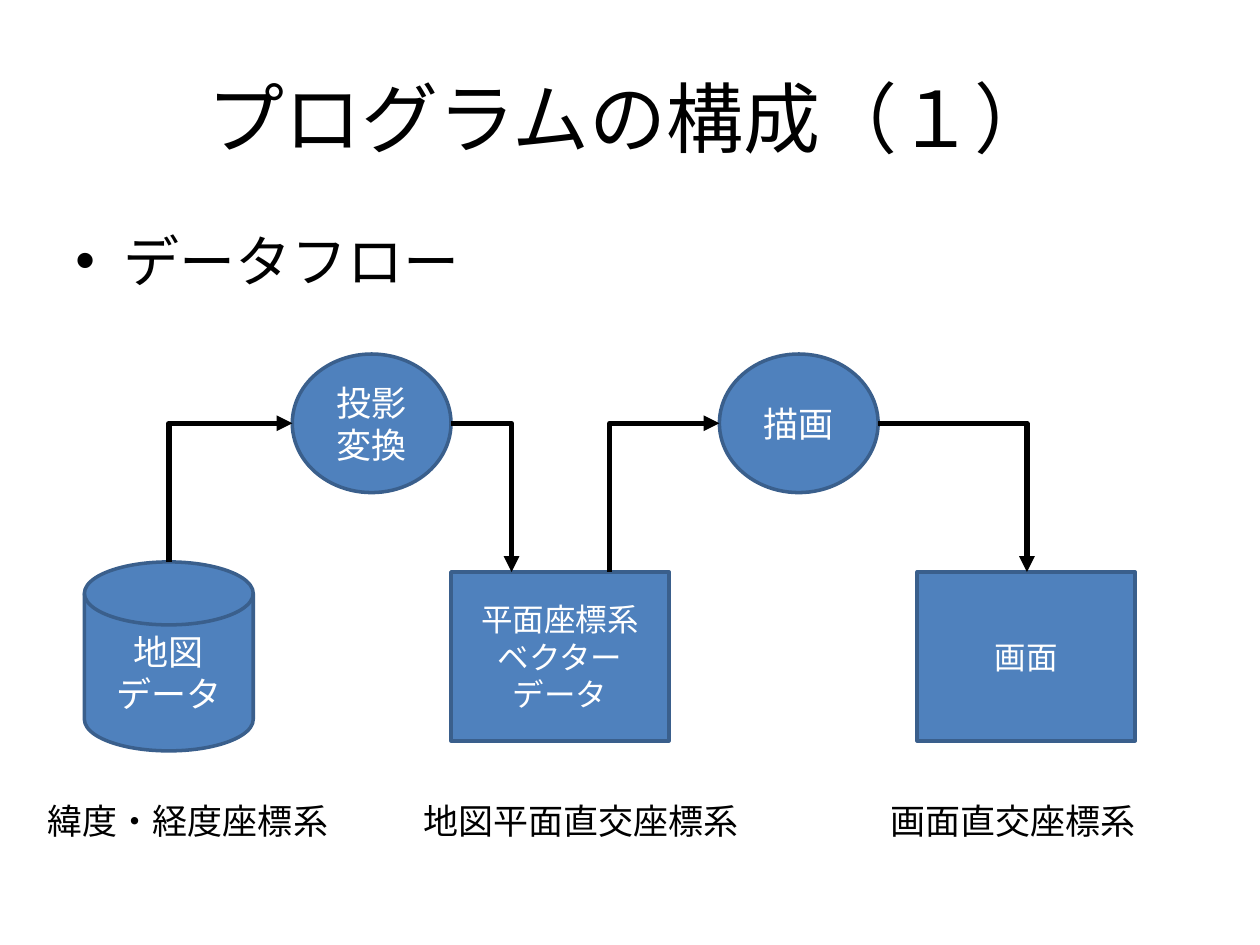
from dataclasses import dataclass

from lxml import etree
from pptx import Presentation
from pptx.dml.color import RGBColor
from pptx.enum.lang import MSO_LANGUAGE_ID
from pptx.enum.shapes import MSO_CONNECTOR, MSO_SHAPE
from pptx.enum.text import MSO_ANCHOR, PP_ALIGN
from pptx.oxml.ns import qn
from pptx.util import Pt

PX = 9144  # 100 px to the inch
FONT = "Noto Sans Mono"
BLACK = RGBColor(0x00, 0x00, 0x00)
WHITE = RGBColor(0xFF, 0xFF, 0xFF)
BLUE = RGBColor(0x4F, 0x81, 0xBD)
DARK_BLUE = RGBColor(0x3A, 0x5F, 0x8C)

DISK = MSO_SHAPE.FLOWCHART_MAGNETIC_DISK
OVAL = MSO_SHAPE.OVAL
RECTANGLE = MSO_SHAPE.RECTANGLE
ELBOW = MSO_CONNECTOR.ELBOW
JAPANESE = MSO_LANGUAGE_ID.JAPANESE
TOP, MIDDLE = MSO_ANCHOR.TOP, MSO_ANCHOR.MIDDLE
LEFT, CENTER = PP_ALIGN.LEFT, PP_ALIGN.CENTER


@dataclass(frozen=True)
class Node:
    kind: MSO_SHAPE
    x: int
    y: int
    width: int
    height: int
    text: str
    size: int


@dataclass(frozen=True)
class Label:
    text: str
    x: int
    y: int
    width: int
    height: int
    size: int
    align: PP_ALIGN = LEFT
    anchor: MSO_ANCHOR = TOP
    wrap: bool = False
    bullet: bool = False


@dataclass(frozen=True)
class Flow:
    """An arrow with one corner, rising first or falling last."""
    x1: int
    y1: int
    x2: int
    y2: int


PROCESS_Y, STORE_Y, CAPTION_Y = 281, 454, 630
AXIS_Y = PROCESS_Y + 55

NODES = [
    Node(DISK, 67, 446, 134, 150, "地図\nデータ", 20),
    Node(OVAL, 232, PROCESS_Y, 126, 110, "投影変換", 20),
    Node(RECTANGLE, 358, STORE_Y, 173, 134, "平面座標系\nベクター\nデータ", 18),
    Node(OVAL, 571, PROCESS_Y, 126, 110, "描画", 20),
    Node(RECTANGLE, 728, STORE_Y, 173, 134, "画面", 18),
]

FLOWS = [
    Flow(134, 446, 232, AXIS_Y),
    Flow(358, AXIS_Y, 406, STORE_Y),
    Flow(484, STORE_Y, 571, AXIS_Y),
    Flow(697, AXIS_Y, 815, STORE_Y),
]

LABELS = [
    Label("プログラムの構成（１）", 50, 30, 900, 125, 44, CENTER, MIDDLE, wrap=True),
    Label("データフロー", 50, 175, 900, 106, 32, wrap=True, bullet=True),
    Label("緯度・経度座標系", 28, CAPTION_Y, 245, 44, 20),
    Label("地図平面直交座標系", 326, CAPTION_Y, 273, 44, 20),
    Label("画面直交座標系", 697, CAPTION_Y, 217, 44, 20),
]


def format_text(frame, size: int, color: RGBColor, align: PP_ALIGN) -> None:
    for paragraph in frame.paragraphs:
        paragraph.alignment = align
        for run in paragraph.runs:
            font = run.font
            font.size = Pt(size)
            font.name = FONT
            font.color.rgb = color
            font.language_id = JAPANESE
            latin = run._r.rPr.find(qn("a:latin"))
            east_asian = etree.Element(qn("a:ea"), typeface=FONT)
            latin.addnext(east_asian)


def add_bullet(paragraph) -> None:
    properties = paragraph._p.get_or_add_pPr()
    indent = 38 * PX
    properties.set("marL", str(indent))
    properties.set("indent", str(-indent))
    etree.SubElement(properties, qn("a:buFont"), typeface="Arial")
    etree.SubElement(properties, qn("a:buChar"), char="•")


def draw_node(slide, node: Node) -> None:
    shape = slide.shapes.add_shape(
        node.kind, node.x * PX, node.y * PX, node.width * PX, node.height * PX)
    shape.shadow.inherit = False
    shape.fill.solid()
    shape.fill.fore_color.rgb = BLUE
    shape.line.color.rgb = DARK_BLUE
    shape.line.width = Pt(2)
    frame = shape.text_frame
    frame.text = node.text
    frame.word_wrap = True
    frame.vertical_anchor = MIDDLE
    format_text(frame, node.size, WHITE, CENTER)


def draw_label(slide, label: Label) -> None:
    box = slide.shapes.add_textbox(
        label.x * PX, label.y * PX, label.width * PX, label.height * PX)
    frame = box.text_frame
    frame.text = label.text
    frame.word_wrap = label.wrap
    frame.vertical_anchor = label.anchor
    if label.bullet:
        add_bullet(frame.paragraphs[0])
    format_text(frame, label.size, BLACK, label.align)


def draw_flow(slide, flow: Flow) -> None:
    connector = slide.shapes.add_connector(
        ELBOW, flow.x1 * PX, flow.y1 * PX, flow.x2 * PX, flow.y2 * PX)
    connector.line.color.rgb = BLACK
    connector.line.width = Pt(3)
    properties = connector._element.spPr
    properties.find(qn("a:prstGeom")).set("prst", "bentConnector2")
    line = properties.find(qn("a:ln"))
    etree.SubElement(line, qn("a:tailEnd"), type="triangle")
    etree.SubElement(properties, qn("a:effectLst"))

    if flow.y2 < flow.y1:
        # A quarter turn with both flips makes the arrow leave upwards.
        across, rise = flow.x2 - flow.x1, flow.y1 - flow.y2
        shift = (across - rise) * PX // 2
        connector.left = flow.x1 * PX + shift
        connector.top = flow.y2 * PX - shift
        connector.width, connector.height = rise * PX, across * PX
        transform = properties.find(qn("a:xfrm"))
        transform.set("rot", "5400000")
        transform.set("flipH", "1")
        transform.set("flipV", "1")


def main() -> None:
    presentation = Presentation()
    presentation.slide_width = 1000 * PX
    presentation.slide_height = 750 * PX
    slide = presentation.slides.add_slide(presentation.slide_layouts[6])
    for node in NODES:
        draw_node(slide, node)
    for flow in FLOWS:
        draw_flow(slide, flow)
    for label in LABELS:
        draw_label(slide, label)
    presentation.save("out.pptx")


if __name__ == "__main__":
    main()
